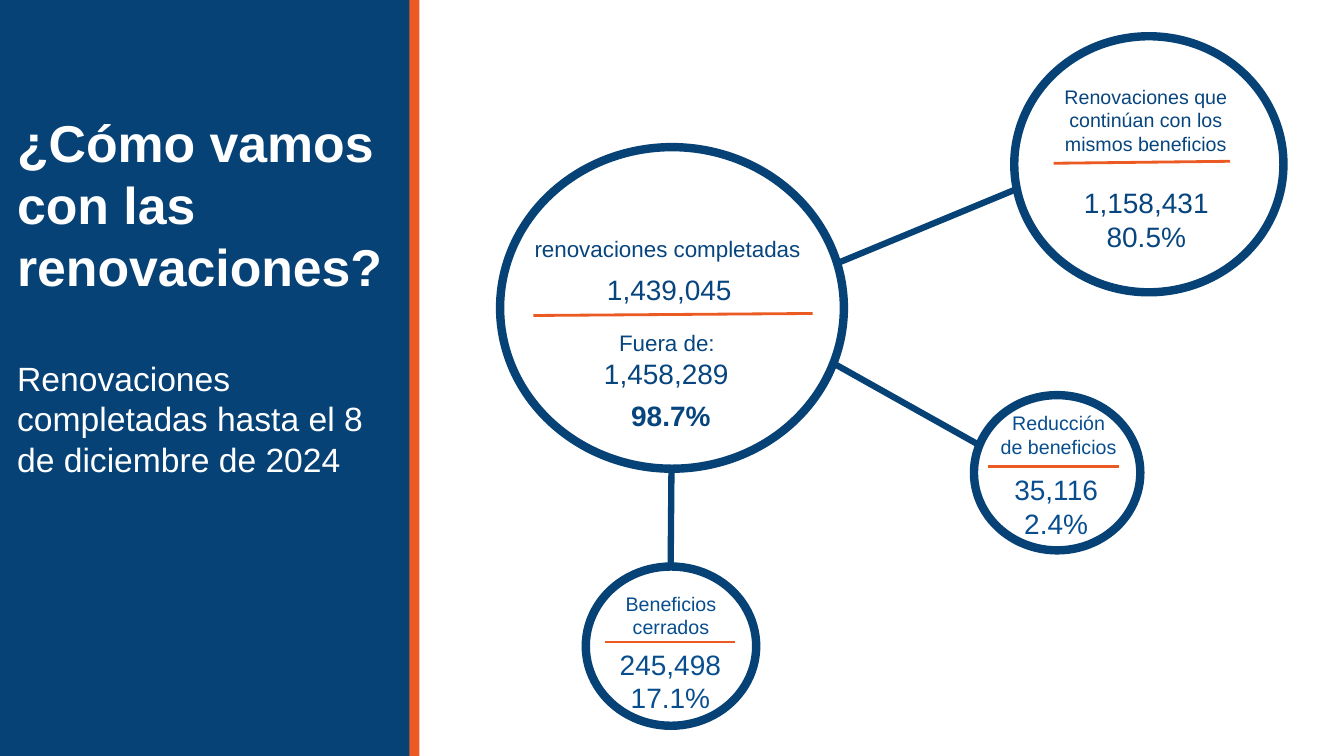
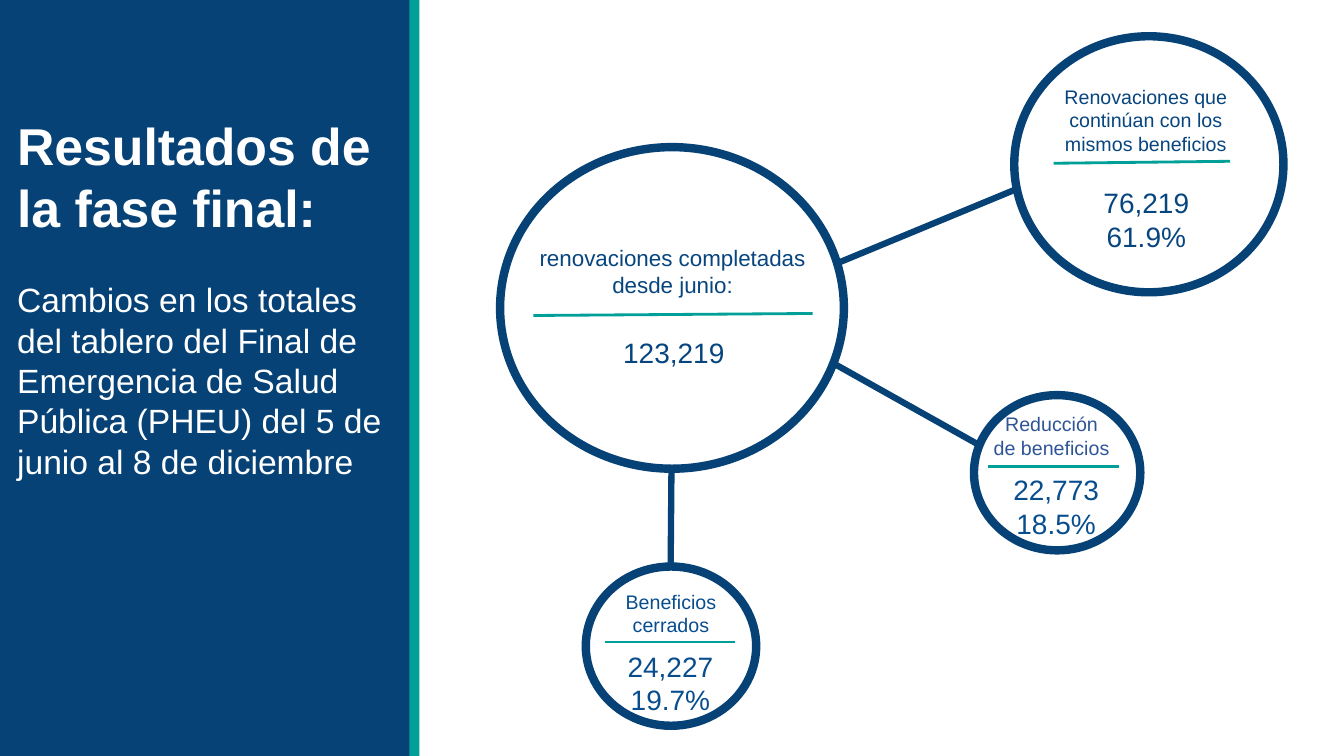
from dataclasses import dataclass

from lxml import etree
from pptx import Presentation
from pptx import util as u
from pptx.dml.color import RGBColor
from pptx.enum import shapes, text
from pptx.oxml import ns


@dataclass(frozen=True)
class Theme:
    font: str = "Arial"
    navy: str = "064276"
    white: str = "FFFFFF"
    orange: str = "EC5A24"
    teal: str = "009F98"
    ink: str = "07457F"
    blue: str = "084E8F"
    slate: str = "2F5597"
    title: int = 37
    sub: int = 24
    figure: int = 20
    label: int = 16
    small: int = 14
    link: float = 4.5
    ring: int = 6
    rule: int = 2


T = Theme()
LEFT, MID = text.PP_ALIGN.LEFT, text.PP_ALIGN.CENTER

# Circles and rules: left, top, width, height / start and end points
RINGS = [(4.96, 1.46, 3.41, 3.19), (10.06, 0.36, 2.67, 2.54),
         (9.66, 3.92, 1.65, 1.54), (5.81, 5.62, 1.69, 1.58)]
LINKS = [(10.58, 1.67, 7.8, 2.82), (9.72, 4.42, 8.24, 3.59),
         (6.65, 5.81, 6.66, 4.63)]
RULES = [(5.29, 3.13, 8.06, 3.11), (10.45, 1.62, 12.2, 1.6),
         (9.8, 4.63, 11.1, 4.63), (6, 6.37, 7.29, 6.37)]


def rgb(code):
    return RGBColor.from_string(code)


def inches(*sizes):
    return [u.Inches(size) for size in sizes]


def add_form(slide, kind, box, fill, edge=None):
    """Filled preset shape, with an outline if edge is given."""
    form = slide.shapes.add_shape(kind, *inches(*box))
    form.shadow.inherit = False
    form.fill.solid()
    form.fill.fore_color.rgb = rgb(fill)
    if edge:
        form.line.color.rgb = rgb(edge)
        form.line.width = u.Pt(T.ring)
    else:
        form.line.fill.background()


def add_line(slide, ends, color, width):
    line = slide.shapes.add_connector(
        shapes.MSO_CONNECTOR.STRAIGHT, *inches(*ends))
    line.line.color.rgb = rgb(color)
    line.line.width = u.Pt(width)
    etree.SubElement(line._element.spPr, ns.qn("a:effectLst"))


def add_text(slide, box, words, size, color=T.ink, align=MID, bold=False):
    """Text box with one paragraph for each line of words."""
    frame = slide.shapes.add_textbox(*inches(*box)).text_frame
    frame.word_wrap = True
    frame.margin_left = frame.margin_right = u.Inches(0.04)
    frame.margin_top = frame.margin_bottom = u.Inches(0.04)
    frame.text = words
    for para in frame.paragraphs:
        para.alignment = align
        para.line_spacing = u.Pt(size * 1.2)
        font = para.font
        font.name, font.size, font.bold = T.font, u.Pt(size), bold
        font.color.rgb = rgb(color)


def add_side(slide, accent, title, title_y, sub, sub_y):
    """Navy panel with its accent bar, title and subtitle."""
    rect = shapes.MSO_SHAPE.RECTANGLE
    add_form(slide, rect, (0, 0, 4.07, 7.5), T.navy)
    add_form(slide, rect, (4.06, 0, 0.1, 7.5), accent)
    add_text(slide, (0.13, title_y, 3.88, 2), title, T.title,
             T.white, LEFT, True)
    add_text(slide, (0.13, sub_y, 3.88, 2.2), sub, T.sub, T.white, LEFT)


def add_map(slide, accent):
    """Linked circles, each with a rule."""
    for ends in LINKS:
        add_line(slide, ends, T.navy, T.link)
    for box in RINGS:
        add_form(slide, shapes.MSO_SHAPE.OVAL, box, T.white, T.navy)
    for ends in RULES:
        add_line(slide, ends, accent, T.rule)


def add_kept(slide, figures):
    add_text(slide, (10.48, 0.8, 1.77, 0.8),
             "Renovaciones que continúan con los mismos beneficios", T.small)
    add_text(slide, (10.47, 1.8, 1.8, 0.85), figures, T.figure)


def add_cut(slide, box, words, color, figures):
    add_text(slide, box, words, T.small, color)
    add_text(slide, (9.98, 4.65, 0.99, 0.74), figures, T.figure, T.blue)


def add_closed(slide, label_y, figures, figure_y):
    add_text(slide, (6.08, label_y, 1.15, 0.55), "Beneficios cerrados",
             T.small, T.blue)
    add_text(slide, (6, figure_y, 1.3, 0.73), figures, T.figure, T.blue)


def add_totals(deck):
    slide = deck.slides.add_slide(deck.slide_layouts[6])
    add_side(slide, T.orange, "¿Cómo vamos con las renovaciones?", 1.06,
             "Renovaciones completadas hasta el 8 de diciembre de 2024", 3.51)
    add_map(slide, T.orange)
    # Main circle
    add_text(slide, (5.18, 2.29, 2.88, 0.35), "renovaciones completadas",
             T.label)
    add_text(slide, (5.98, 2.66, 1.64, 0.47), "1,439,045", T.figure,
             align=LEFT)
    add_text(slide, (5.13, 3.22, 2.97, 0.35), "Fuera de:", T.label)
    add_text(slide, (5.95, 3.5, 1.64, 0.47), "1,458,289", T.figure,
             align=LEFT)
    add_text(slide, (6.22, 3.91, 0.9, 0.49), "98.7%", T.figure,
             align=LEFT, bold=True)
    # Outer circles
    add_kept(slide, "1,158,431\n80.5%")
    add_cut(slide, (9.85, 4.04, 1.3, 0.55), "Reducción\nde beneficios",
            T.blue, "35,116\n2.4%")
    add_closed(slide, 5.83, "245,498\n17.1%", 6.38)


def add_final(deck):
    slide = deck.slides.add_slide(deck.slide_layouts[6])
    add_side(slide, T.teal, "Resultados de la fase final:", 1.09,
             "Cambios en los totales del tablero del Final de Emergencia de "
             "Salud Pública (PHEU) del 5 de junio al 8 de diciembre", 2.73)
    add_map(slide, T.teal)
    # Main circle
    add_text(slide, (5.23, 2.38, 2.88, 0.65),
             "renovaciones completadas desde junio:", T.label)
    add_text(slide, (6.14, 3.29, 1.64, 0.47), "123,219", T.figure,
             align=LEFT)
    # Outer circles
    add_kept(slide, "76,219\n61.9%")
    add_cut(slide, (9.81, 4.05, 1.24, 0.55), "Reducción de beneficios",
            T.slate, "22,773\n18.5%")
    add_closed(slide, 5.81, "24,227\n19.7%", 6.4)


def main():
    deck = Presentation()
    deck.slide_width, deck.slide_height = inches(13.33, 7.5)
    add_totals(deck)
    add_final(deck)
    deck.save("out.pptx")


if __name__ == "__main__":
    main()
